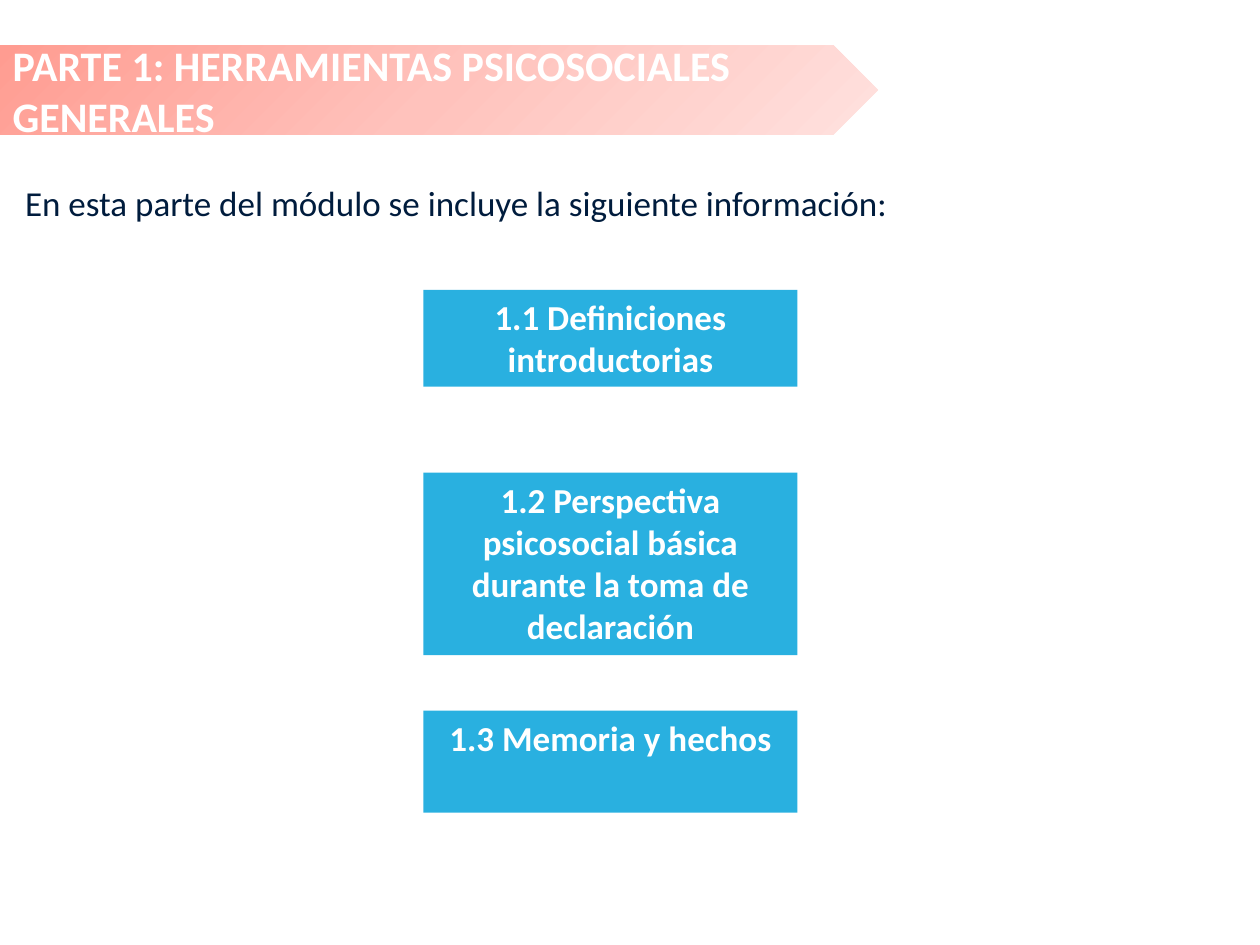
from lxml import etree
from pptx import Presentation
from pptx.dml.color import RGBColor
from pptx.enum.shapes import MSO_SHAPE
from pptx.enum.text import MSO_ANCHOR, MSO_AUTO_SIZE, PP_ALIGN
from pptx.oxml import parse_xml
from pptx.oxml.ns import qn
from pptx.util import Inches, Pt

PENTAGON, RECTANGLE = MSO_SHAPE.PENTAGON, MSO_SHAPE.RECTANGLE
TOP, MIDDLE = MSO_ANCHOR.TOP, MSO_ANCHOR.MIDDLE
LEFT, CENTER, JUSTIFY = PP_ALIGN.LEFT, PP_ALIGN.CENTER, PP_ALIGN.JUSTIFY
FIXED, GROW = MSO_AUTO_SIZE.NONE, MSO_AUTO_SIZE.SHAPE_TO_FIT_TEXT
DRAWING_NAMESPACE = "http://schemas.openxmlformats.org/drawingml/2006/main"


def color(value):
    return RGBColor.from_string(value)


class SlideBuilder:
    font = "Calibri"
    white, navy, blue = "FFFFFF", "001C3D", "00A2DB"
    banner_stops = ((0, "FF9C91"), (50, "FFC2BC"), (100, "FFE1DE"))
    card_opacity = 84

    def __init__(self, slide):
        self.slide = slide

    def fill_text(self, shape, text, size, text_color, bold, align, anchor, auto_size):
        frame = shape.text_frame
        frame.word_wrap = True
        frame.auto_size = auto_size
        frame.vertical_anchor = anchor
        paragraph = frame.paragraphs[0]
        paragraph.alignment = align
        run = paragraph.add_run()
        run.text = text
        run.font.name = self.font
        run.font.size = Pt(size)
        run.font.bold = bold
        run.font.color.rgb = color(text_color)

    def plain_shape(self, kind, left, top, width, height):
        shape = self.slide.shapes.add_shape(
            kind, Inches(left), Inches(top), Inches(width), Inches(height))
        shape.shadow.inherit = False
        shape.line.fill.background()
        return shape

    def banner(self, left, top, width, height):
        shape = self.plain_shape(PENTAGON, left, top, width, height)
        stops = "".join(
            f'<a:gs pos="{position * 1000}"><a:srgbClr val="{value}"/></a:gs>'
            for position, value in self.banner_stops)
        # Radial gradient that starts in the top left corner
        gradient = parse_xml(
            f'<a:gradFill xmlns:a="{DRAWING_NAMESPACE}" rotWithShape="1">'
            f'<a:gsLst>{stops}</a:gsLst><a:path path="circle">'
            '<a:fillToRect r="100000" b="100000"/></a:path></a:gradFill>')
        shape.element.spPr.find(qn("a:prstGeom")).addnext(gradient)

    def title(self, text, left, top, width, height):
        title = self.slide.shapes.title
        title.left, title.top = Inches(left), Inches(top)
        title.width, title.height = Inches(width), Inches(height)
        self.fill_text(title, text, 24, self.white, True, LEFT, MIDDLE, FIXED)
        # Bring the title in front of the banner
        title.element.getparent().append(title.element)

    def text(self, text, left, top, width, height):
        box = self.slide.shapes.add_textbox(
            Inches(left), Inches(top), Inches(width), Inches(height))
        self.fill_text(box, text, 20, self.navy, False, JUSTIFY, TOP, FIXED)

    def card(self, text, left, top, width, height):
        shape = self.plain_shape(RECTANGLE, left, top, width, height)
        shape.fill.solid()
        shape.fill.fore_color.rgb = color(self.blue)
        fill_color = shape.element.spPr.find(qn("a:solidFill")).find(qn("a:srgbClr"))
        etree.SubElement(fill_color, qn("a:alpha")).set("val", str(self.card_opacity * 1000))
        self.fill_text(shape, text, 20, self.white, True, CENTER, TOP, GROW)


def main():
    presentation = Presentation()
    presentation.slide_width, presentation.slide_height = Inches(10), Inches(7.5)
    slide = presentation.slides.add_slide(presentation.slide_layouts[5])
    builder = SlideBuilder(slide)

    # Heading; the title stops halfway along the banner's point
    banner_top, banner_width, banner_height = 0.36, 6.97, 0.71
    builder.banner(0, banner_top, banner_width, banner_height)
    builder.title("PARTE 1: HERRAMIENTAS PSICOSOCIALES GENERALES",
                  0, banner_top, banner_width - banner_height / 4, banner_height)

    # Introduction
    builder.text("En esta parte del módulo se incluye la siguiente información:",
                 0.1, 1.39, 9.49, 0.47)

    # Column of section cards
    sections = (
        ("1.1 Definiciones introductorias", 2.3, 0.77),
        ("1.2 Perspectiva psicosocial básica durante la toma de declaración", 3.75, 1.45),
        ("1.3 Memoria y hechos", 5.64, 0.81),
    )
    for text, top, height in sections:
        builder.card(text, 3.36, top, 2.97, height)

    presentation.save("out.pptx")


if __name__ == "__main__":
    main()
